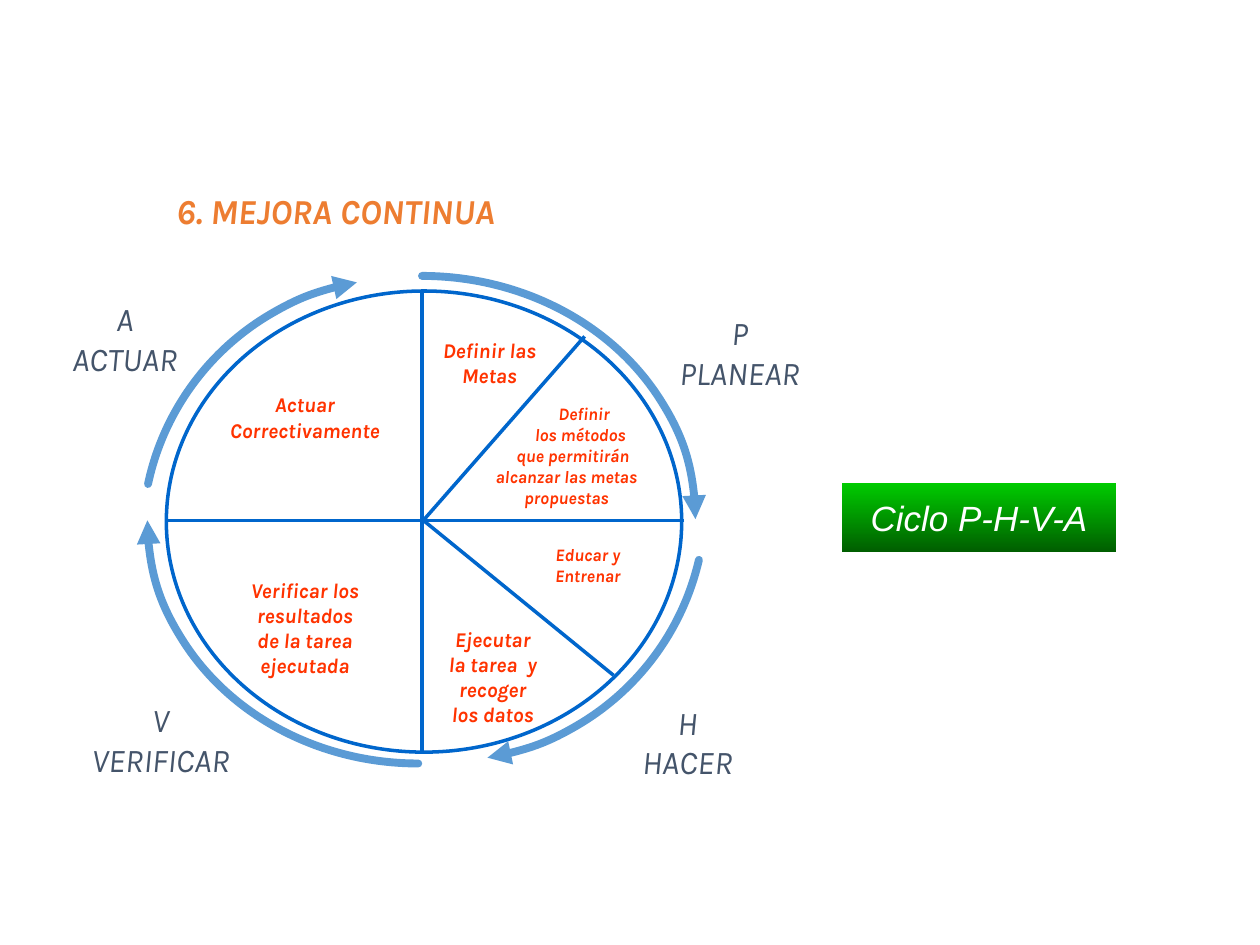
import pptx
import pptx.util
import pptx.dml.color
import pptx.enum.shapes
import pptx.enum.text
import pptx.oxml
import pptx.oxml.ns

Inches = pptx.util.Inches
Pt = pptx.util.Pt
RGBColor = pptx.dml.color.RGBColor
SHAPE = pptx.enum.shapes.MSO_SHAPE
ALIGN = pptx.enum.text.PP_ALIGN
MIDDLE = pptx.enum.text.MSO_ANCHOR.MIDDLE

ORANGE = RGBColor(0xED, 0x7D, 0x31)
RED = RGBColor(0xFF, 0x33, 0x00)
SLATE = RGBColor(0x44, 0x54, 0x6A)
WHEEL_BLUE = RGBColor(0x00, 0x66, 0xCC)
ARROW_BLUE = RGBColor(0x5B, 0x9B, 0xD5)
WHITE = RGBColor(0xFF, 0xFF, 0xFF)
GREEN = RGBColor(0x00, 0xCC, 0x00)
DARK_GREEN = RGBColor(0x00, 0x5E, 0x00)


def add_run(paragraph, text, size, color, bold=False, font="Karla"):
    run = paragraph.add_run()
    run.text = text
    run.font.name = font
    run.font.size = Pt(size)
    run.font.bold = bold
    run.font.italic = True
    run.font.color.rgb = color


def add_lines(box, lines, size, color, bold, indents=()):
    """Centred text box, one paragraph per line, optionally indented."""
    frame = slide.shapes.add_textbox(*map(Inches, box)).text_frame
    frame.word_wrap = bool(indents)
    frame.margin_left = frame.margin_right = Inches(0.08)
    frame.margin_top = frame.margin_bottom = Inches(0.04)
    for i, line in enumerate(lines):
        paragraph = frame.paragraphs[0] if i == 0 else frame.add_paragraph()
        paragraph.alignment = ALIGN.CENTER
        if indents:
            properties = paragraph._p.get_or_add_pPr()
            properties.set("marL", str(Inches(indents[i])))
            properties.set("indent", "0")
        add_run(paragraph, line, size, color, bold)


presentation = pptx.Presentation()
presentation.slide_width = Inches(10)
presentation.slide_height = Inches(7.5)
slide = presentation.slides.add_slide(presentation.slide_layouts[5])

# Title
title = slide.shapes.title
title.left, title.top = Inches(1.3), Inches(1.45)
title.width, title.height = Inches(4.41), Inches(0.44)
title.text_frame.vertical_anchor = MIDDLE
heading = title.text_frame.paragraphs[0]
heading.alignment = ALIGN.LEFT
add_run(heading, "6. MEJORA CONTINUA", 20, ORANGE, bold=True)

# Wheel
wheel = slide.shapes.add_shape(
    SHAPE.OVAL, Inches(1.32), Inches(2.31), Inches(4.09), Inches(3.66))
wheel.shadow.inherit = False
wheel.fill.solid()
wheel.fill.fore_color.rgb = WHITE
wheel.line.color.rgb = WHEEL_BLUE
wheel.line.width = Pt(2)

# Dividers between the sectors: x1, y1, x2, y2
for ends in [(3.35, 2.32, 3.35, 5.97), (5.43, 4.13, 1.32, 4.13),
             (3.36, 4.13, 4.64, 2.67), (3.36, 4.13, 4.87, 5.36)]:
    divider = slide.shapes.add_connector(
        pptx.enum.shapes.MSO_CONNECTOR.STRAIGHT, *map(Inches, ends))
    divider.line.color.rgb = WHEEL_BLUE
    divider.line.width = Pt(2)
    divider._element.spPr.append(pptx.oxml.parse_xml(
        "<a:effectLst %s/>" % pptx.oxml.ns.nsdecls("a")))

# Clockwise arrows: centre x, centre y, radius x, radius y, start and end degrees
for cx, cy, rx, ry, start, end in [
    (3.35, 4.12, 2.17, 1.93, 270, 0),
    (3.54, 3.98, 2.06, 2.06, 13, 80.8),
    (3.32, 4.13, 2.15, 1.93, 90, 180),
    (3.19, 4.27, 2.06, 2.06, 192, 260),
]:
    arrow = slide.shapes.add_shape(
        SHAPE.ARC, Inches(cx - rx), Inches(cy - ry), Inches(2 * rx), Inches(2 * ry))
    # Angles are stored in 1/60000 degree, adjustments in 1/100000
    arrow.adjustments[0] = start * 0.6
    arrow.adjustments[1] = end * 0.6
    arrow.shadow.inherit = False
    arrow.fill.background()
    arrow.line.color.rgb = ARROW_BLUE
    arrow.line.width = Pt(4.5)
    outline = arrow.line._get_or_add_ln()
    outline.set("cap", "rnd")
    outline.append(pptx.oxml.parse_xml(
        '<a:tailEnd type="triangle" %s/>' % pptx.oxml.ns.nsdecls("a")))

# Stage names around the wheel
for box, stage in [
    ((5.17, 2.44, 1.4, 0.71), ["P", "PLANEAR"]),
    ((4.88, 5.53, 1.15, 0.71), ["H", "HACER"]),
    ((0.45, 5.51, 1.65, 0.71), ["V", "VERIFICAR"]),
    ((0.33, 2.33, 1.32, 0.71), ["A", "ACTUAR"]),
]:
    add_lines(box, stage, 19, SLATE, False)

# Tasks inside the sectors
for box, task, size, indents in [
    ((3.38, 2.64, 1.01, 0.48), ["Definir las", "Metas"], 12, ()),
    ((3.62, 3.16, 1.75, 0.91),
     ["Definir", "los métodos", "que permitirán", "alcanzar las metas", "propuestas"],
     10, (0.28, 0.22, 0.1, 0, 0)),
    ((4.28, 4.28, 0.77, 0.41), ["Educar y", "Entrenar"], 10, ()),
    ((3.39, 4.93, 1.04, 0.88),
     ["Ejecutar", "la tarea  y", "recoger", "los datos"], 12, ()),
    ((1.84, 4.54, 1.16, 0.88),
     ["Verificar los", "resultados", "de la tarea", "ejecutada"], 12, ()),
    ((1.64, 3.07, 1.56, 0.48), ["Actuar", "Correctivamente"], 12, ()),
]:
    add_lines(box, task, size, RED, True, indents)

# Cycle name
cycle = slide.shapes.add_shape(
    SHAPE.RECTANGLE, Inches(6.68), Inches(3.83), Inches(2.18), Inches(0.55))
cycle.shadow.inherit = False
cycle.line.fill.background()
cycle.fill.gradient()
cycle.fill.gradient_angle = 270
for stop, color in zip(cycle.fill.gradient_stops, (GREEN, DARK_GREEN)):
    stop.color.rgb = color
cycle.text_frame.word_wrap = False
cycle.text_frame.vertical_anchor = MIDDLE
cycle_name = cycle.text_frame.paragraphs[0]
cycle_name.alignment = ALIGN.CENTER
add_run(cycle_name, "Ciclo P-H-V-A", 20, WHITE, font="Arial")

presentation.save("out.pptx")
